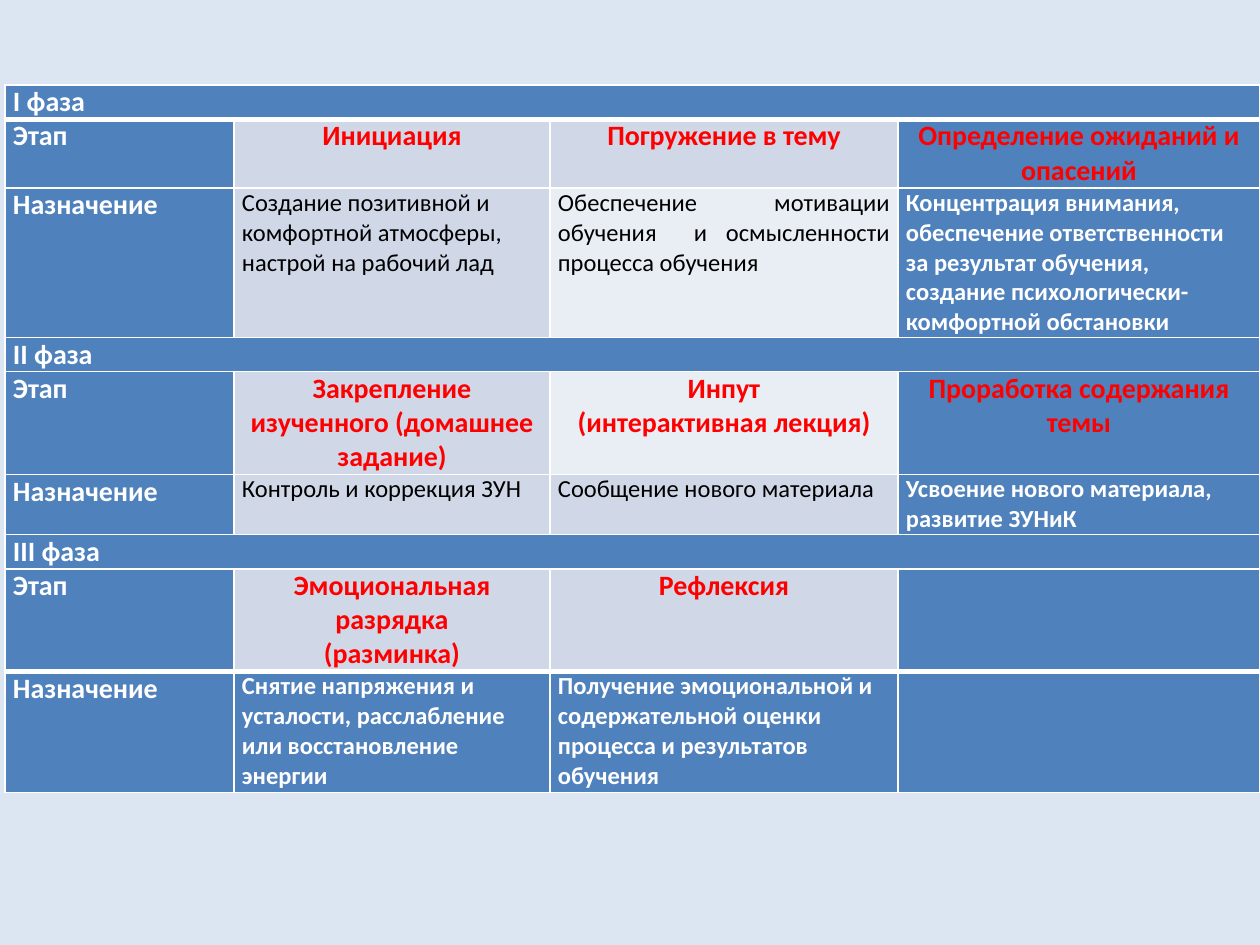
from lxml.etree import SubElement
from pptx import Presentation
from pptx.dml.color import RGBColor
from pptx.enum.text import PP_ALIGN
from pptx.oxml.ns import qn
from pptx.util import Emu, Pt

PX = 914400 // 126  # one px in EMU
FONT = "Calibri"
WHITE = RGBColor(0xFF, 0xFF, 0xFF)
BLACK = RGBColor(0, 0, 0)
RED = RGBColor(0xFF, 0, 0)
BLUE = RGBColor(0x4F, 0x81, 0xBD)
LIGHT = RGBColor(0xD0, 0xD8, 0xE8)
PALE = RGBColor(0xE9, 0xED, 0xF4)
BACKGROUND = RGBColor(0xDC, 0xE6, 0xF2)

# Each phase: name, stages, purposes
PHASES = [
    ("I фаза",
     ["Инициация", "Погружение в тему", "Определение ожиданий и опасений"],
     ["Создание позитивной и комфортной атмосферы, настрой на рабочий лад",
      "Обеспечение мотивации обучения  и осмысленности процесса обучения",
      "Концентрация внимания, обеспечение ответственности за результат обучения, "
      "создание психологически-комфортной обстановки"]),
    ("II фаза",
     ["Закрепление изученного (домашнее задание)", "Инпут\n(интерактивная лекция)",
      "Проработка содержания темы"],
     ["Контроль и коррекция ЗУН", "Сообщение нового материала",
      "Усвоение нового материала, развитие ЗУНиК"]),
    ("III фаза",
     ["Эмоциональная разрядка\n(разминка)", "Рефлексия", ""],
     ["Снятие напряжения и усталости, расслабление или восстановление энергии",
      "Получение эмоциональной и содержательной оценки процесса и результатов обучения",
      ""]),
]
LEFT, TOP = 5, 85
COLUMNS = [229, 316, 348, 362]
ROWS = [34, 69, 149, 34, 103, 60, 34, 102, 121]
LAST_ROW = len(ROWS) - 1
PALE_CELLS = {(2, 2), (4, 2)}
JUSTIFIED_CELL = (2, 2)


def cell_fill(row, column):
    if row % 3 == 0 or column in (0, 3) or row == LAST_ROW:
        return BLUE
    return PALE if (row, column) in PALE_CELLS else LIGHT


def text_style(row, column):
    """Size, weight, colour and alignment of a cell's text."""
    if row % 3 == 0 or column == 0:
        return 16, True, WHITE, PP_ALIGN.LEFT
    if row % 3 == 1:
        return 16, True, RED, PP_ALIGN.CENTER
    on_blue = cell_fill(row, column) == BLUE
    align = PP_ALIGN.JUSTIFY if (row, column) == JUSTIFIED_CELL else PP_ALIGN.LEFT
    return 14, on_blue, WHITE if on_blue else BLACK, align


def set_borders(cell, row):
    properties = cell._tc.get_or_add_tcPr()
    thick = {"lnT": row in (1, LAST_ROW), "lnB": row in (0, LAST_ROW - 1)}
    for side in ("lnL", "lnR", "lnT", "lnB"):
        width = 3 if thick.get(side) else 1
        line = SubElement(properties, qn(f"a:{side}"), w=str(Pt(width)))
        solid = SubElement(line, qn("a:solidFill"))
        SubElement(solid, qn("a:srgbClr"), val=str(WHITE))


def write_cell(cell, row, column, text):
    cell.margin_left = cell.margin_right = Emu(8 * PX)
    cell.margin_top = cell.margin_bottom = 0
    set_borders(cell, row)
    cell.fill.solid()
    cell.fill.fore_color.rgb = cell_fill(row, column)
    cell.text = text
    size, bold, color, align = text_style(row, column)
    for para in cell.text_frame.paragraphs:
        para.alignment = align
        para.font.name = FONT
        para.font.size = Pt(size)
        para.font.bold = bold
        para.font.color.rgb = color


def main():
    deck = Presentation()
    deck.slide_width, deck.slide_height = Emu(1260 * PX), Emu(945 * PX)
    page = deck.slides.add_slide(deck.slide_layouts[6])
    page.background.fill.solid()
    page.background.fill.fore_color.rgb = BACKGROUND

    # Table grid
    table = page.shapes.add_table(
        len(ROWS), len(COLUMNS), Emu(LEFT * PX), Emu(TOP * PX),
        Emu(sum(COLUMNS) * PX), Emu(sum(ROWS) * PX)).table
    table.first_row = table.horz_banding = False
    for column, width in zip(table.columns, COLUMNS):
        column.width = Emu(width * PX)
    for row, height in zip(table.rows, ROWS):
        row.height = Emu(height * PX)

    # Three rows per phase: heading, stages, purposes
    lines = []
    for name, stages, purposes in PHASES:
        lines += [[name, "", "", ""], ["Этап", *stages], ["Назначение", *purposes]]
    for row, texts in enumerate(lines):
        for column, text in enumerate(texts):
            write_cell(table.cell(row, column), row, column, text)
        if row % 3 == 0:
            table.cell(row, 0).merge(table.cell(row, len(COLUMNS) - 1))

    deck.save("out.pptx")


if __name__ == "__main__":
    main()
